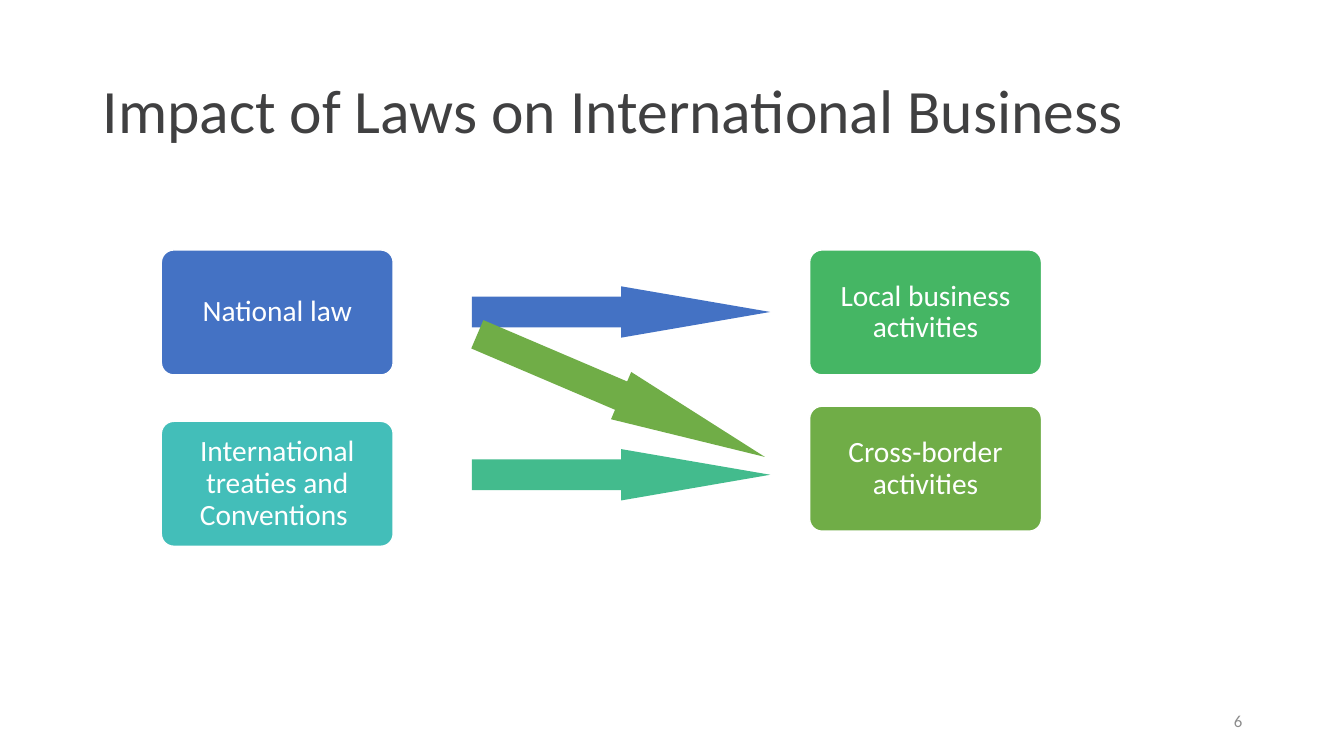
from pptx import Presentation
from pptx.dml.color import RGBColor
from pptx.enum.shapes import MSO_SHAPE
from pptx.enum.text import MSO_ANCHOR, PP_ALIGN
from pptx.util import Inches, Pt

BLUE = RGBColor(0x44, 0x72, 0xC4)
TEAL = RGBColor(0x43, 0xBE, 0xB9)
SEA_GREEN = RGBColor(0x43, 0xBB, 0x8D)
EMERALD = RGBColor(0x45, 0xB6, 0x64)
GREEN = RGBColor(0x70, 0xAD, 0x47)
WHITE = RGBColor(0xFF, 0xFF, 0xFF)
DARK_GRAY = RGBColor(0x40, 0x40, 0x41)
LIGHT_GRAY = RGBColor(0x8C, 0x8C, 0x8C)

# Content: laws on the left, affected activities on the right
TITLE = "Impact of Laws on International Business"
PAGE_NUMBER = "6"
LAW_LEFT, ACTIVITY_LEFT = 1.6, 8.03
BOXES = [  # text, left, top, colour
    ("National law", LAW_LEFT, 2.48, BLUE),
    ("International treaties and Conventions ", LAW_LEFT, 4.18, TEAL),
    ("Local business activities", ACTIVITY_LEFT, 2.48, EMERALD),
    ("Cross-border activities", ACTIVITY_LEFT, 4.03, GREEN),
]
ARROWS = [  # centre height, length, rotation, colour
    (3.095, 2.96, 0, BLUE),
    (4.71, 2.96, 0, SEA_GREEN),
    (3.925, 3.1, 23.1, GREEN),
]

# Sizes in inches
BOX_WIDTH, BOX_HEIGHT, BOX_MARGIN = 2.3, 1.24, 0.12
ARROW_CENTER, ARROW_HEIGHT = 6.16, 0.51

TITLE_FORMAT = {"size": Pt(44), "color": DARK_GRAY}
NUMBER_FORMAT = {"size": Pt(12), "color": LIGHT_GRAY}
BOX_FORMAT = {"size": Pt(21), "color": WHITE}


def write_text(shape, text, text_format, alignment, line_spacing=1.0):
    frame = shape.text_frame
    frame.word_wrap = True
    frame.vertical_anchor = MSO_ANCHOR.MIDDLE
    paragraph = frame.paragraphs[0]
    paragraph.text = text
    paragraph.alignment = alignment
    paragraph.line_spacing = line_spacing
    font = paragraph.runs[0].font
    for name, value in {"name": "Calibri", **text_format}.items():
        if name == "color":
            font.color.rgb = value
        else:
            setattr(font, name, value)


def add_filled_shape(slide, kind, position, color, adjustments):
    shape = slide.shapes.add_shape(kind, *map(Inches, position))
    shape.shadow.inherit = False
    shape.fill.solid()
    shape.fill.fore_color.rgb = color
    for index, value in enumerate(adjustments):
        shape.adjustments[index] = value
    return shape


def add_box(slide, text, left, top, color):
    position = (left, top, BOX_WIDTH, BOX_HEIGHT)
    box = add_filled_shape(slide, MSO_SHAPE.ROUNDED_RECTANGLE, position, color, [0.1])
    box.line.color.rgb = WHITE
    box.line.width = Pt(1)
    for side in ("left", "top", "right", "bottom"):
        setattr(box.text_frame, f"margin_{side}", Inches(BOX_MARGIN))
    write_text(box, text, BOX_FORMAT, PP_ALIGN.CENTER, 0.9)


def add_arrow(slide, center, length, rotation, color):
    position = (ARROW_CENTER - length / 2, center - ARROW_HEIGHT / 2, length, ARROW_HEIGHT)
    # The head takes half of the length
    adjustments = [0.6, length / 2 / ARROW_HEIGHT]
    arrow = add_filled_shape(slide, MSO_SHAPE.RIGHT_ARROW, position, color, adjustments)
    arrow.line.fill.background()
    arrow.rotation = rotation


def main():
    presentation = Presentation()
    presentation.slide_width = Inches(13.33)
    presentation.slide_height = Inches(7.5)
    slide = presentation.slides.add_slide(presentation.slide_layouts[6])

    # Title and page number
    title = slide.shapes.add_textbox(*map(Inches, (0.92, 0.4, 11.5, 1.45)))
    write_text(title, TITLE, TITLE_FORMAT, PP_ALIGN.LEFT, 0.9)
    number = slide.shapes.add_textbox(*map(Inches, (9.42, 6.95, 3, 0.4)))
    write_text(number, PAGE_NUMBER, NUMBER_FORMAT, PP_ALIGN.RIGHT)

    # Diagram
    for box in BOXES:
        add_box(slide, *box)
    for arrow in ARROWS:
        add_arrow(slide, *arrow)

    presentation.save("out.pptx")


if __name__ == "__main__":
    main()
